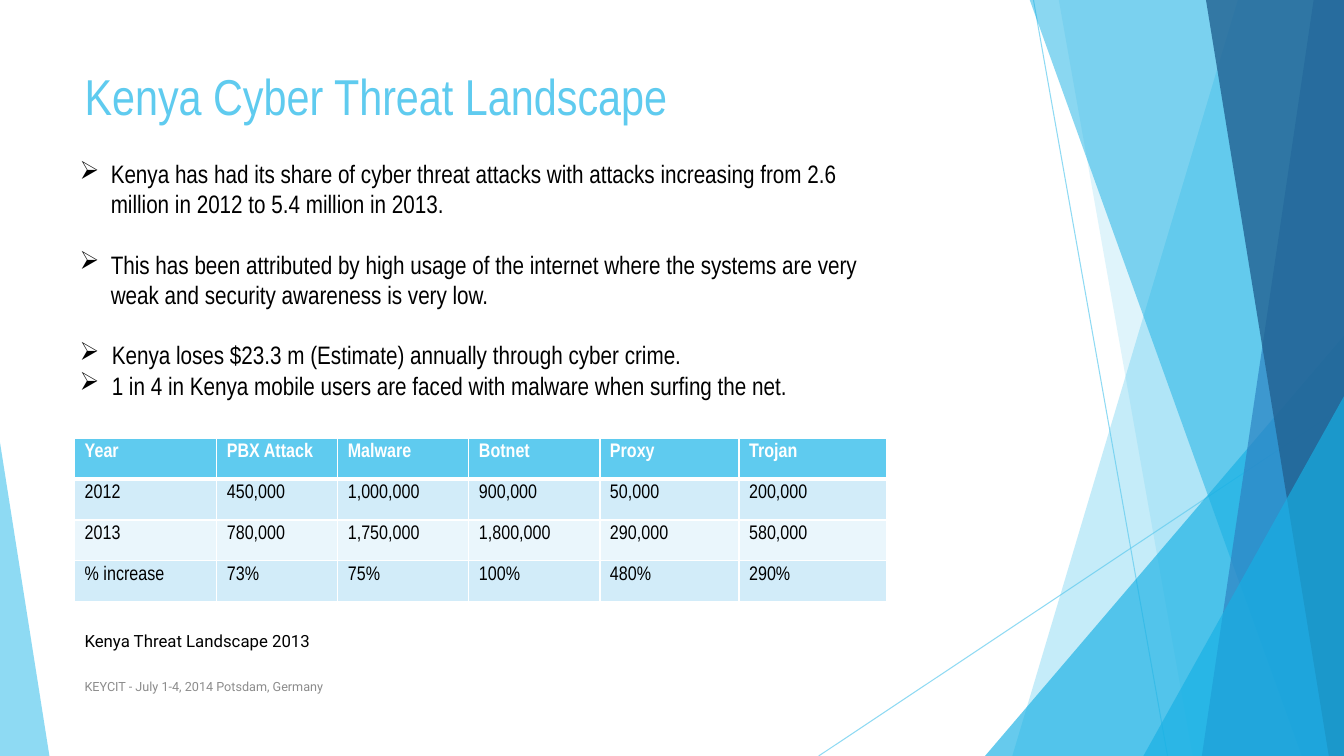
import pptx
import pptx.util
import pptx.dml.color
import pptx.enum.shapes
import pptx.enum.text
import pptx.oxml
import pptx.oxml.ns
import lxml.etree

PX = 9144
COLORS = {
    "sky": "5FCBEF", "cyan": "17B0E4", "blue": "2E83C3", "navy": "226292",
    "band": "D2ECF9", "pale": "EAF6FC", "white": "FFFFFF",
    "black": "000000", "gray": "8C8C8C",
}
NARROW = "Arial Narrow"
RAYS = [((1025, 0), (1158, 750)), ((1333, 403), (812, 750))]
PANELS = [
    (1228, 1004, "sky", 36), (1050, 1183, "sky", 20),
    (1021, 1291, "cyan", 50), (1303, 1192, "blue", 70),
    (1196, 1318, "navy", 80),
]
TRIANGLES = [
    (977, 333, 356, 417, 1, "cyan", 66),
    (1134, 393, 199, 357, 1, "cyan", 66),
    (0, 439, 49, 311, 0, "sky", 70),
]
POINTS = [
    ("Kenya has had its share of cyber threat attacks with attacks increasing "
     "from 2.6 million in 2012 to 5.4 million in 2013.", 31, 21.6),
    ("This has been attributed by high usage of the internet where the systems "
     "are very weak and security awareness is very low.", 31, 21.6),
    ("Kenya loses $23.3 m (Estimate) annually through cyber crime.", 32, 0),
    ("1 in 4 in Kenya mobile users are faced with malware when surfing the net.", 32, 0),
]
COLUMN_WIDTHS = [141, 120, 130, 130, 138, 146]
ATTACKS = [
    ["Year", "PBX Attack", "Malware", "Botnet", "Proxy", "Trojan"],
    ["2012", "450,000", "1,000,000", "900,000", "50,000", "200,000"],
    ["2013", "780,000", "1,750,000", "1,800,000", "290,000", "580,000"],
    ["% increase", "73%", "75%", "100%", "480%", "290%"],
]


def px(*lengths):
    return [length * PX for length in lengths]


def rgb(name):
    return pptx.dml.color.RGBColor.from_string(COLORS[name])


def add_element(parent, tag, **attributes):
    return lxml.etree.SubElement(parent, pptx.oxml.ns.qn(tag), attributes)


def paint(fill, color, opacity):
    fill.solid()
    fill.fore_color.rgb = rgb(color)
    target = fill._xPr.find(".//" + pptx.oxml.ns.qn("a:srgbClr"))
    add_element(target, "a:alpha", val=str(opacity * 1000))


def add_ray(slide, start, end):
    connector = slide.shapes.add_connector(
        pptx.enum.shapes.MSO_CONNECTOR.STRAIGHT, *px(*start, *end))
    connector.line.width = pptx.util.Pt(0.75)
    paint(connector.line.fill, "sky", 70)
    add_element(connector._element.spPr, "a:effectLst")


def finish_shape(shape, color, opacity):
    shape.shadow.inherit = False
    shape.line.fill.background()
    paint(shape.fill, color, opacity)


def add_panel(slide, top_x, bottom_x, color, opacity):
    builder = slide.shapes.build_freeform(top_x, -1, scale=PX)
    builder.add_line_segments([(1333, -1), (1333, 750), (bottom_x, 750)], close=True)
    finish_shape(builder.convert_to_shape(), color, opacity)


def add_triangle(slide, left, top, width, height, apex, color, opacity):
    shape = slide.shapes.add_shape(
        pptx.enum.shapes.MSO_SHAPE.ISOSCELES_TRIANGLE, *px(left, top, width, height))
    shape.adjustments[0] = apex
    finish_shape(shape, color, opacity)


def add_run(paragraph, text, size, font, color, bold=False):
    run = paragraph.add_run()
    run.text = text
    run.font.size = pptx.util.Pt(size)
    run.font.name = font
    run.font.bold = bold
    run.font.color.rgb = rgb(color)


def add_text_frame(slide, box):
    frame = slide.shapes.add_textbox(*px(*box)).text_frame
    frame.word_wrap = True
    return frame


def add_label(slide, box, text, size, font, color):
    frame = add_text_frame(slide, box)
    add_run(frame.paragraphs[0], text, size, font, color)
    return frame


def add_bullets(slide, box, points):
    frame = add_text_frame(slide, box)
    for index, (text, indent, space) in enumerate(points):
        paragraph = frame.add_paragraph() if index else frame.paragraphs[0]
        paragraph.space_after = pptx.util.Pt(space)
        properties = paragraph._p.get_or_add_pPr()
        properties.set("marL", str(indent * PX))
        properties.set("indent", str(-indent * PX))
        add_element(properties, "a:buChar", char="➢")
        add_run(paragraph, text, 18, NARROW, "black")


def add_borders(cell, bottom):
    properties = cell._tc.get_or_add_tcPr()
    for side, width in (("L", 1), ("R", 1), ("T", 1), ("B", bottom)):
        line = add_element(properties, "a:ln" + side, w=str(pptx.util.Pt(width)))
        add_element(add_element(line, "a:solidFill"), "a:srgbClr", val=COLORS["white"])


def add_attack_table(slide):
    table = slide.shapes.add_table(
        len(ATTACKS), len(COLUMN_WIDTHS), *px(74, 435, sum(COLUMN_WIDTHS), 162)).table
    for column, width in zip(table.columns, COLUMN_WIDTHS):
        column.width = width * PX
    for row_index, values in enumerate(ATTACKS):
        header = row_index == 0
        fill = "sky" if header else ("pale", "band")[row_index % 2]
        for column_index, value in enumerate(values):
            cell = table.cell(row_index, column_index)
            add_borders(cell, 3 if header else 1)
            cell.fill.solid()
            cell.fill.fore_color.rgb = rgb(fill)
            add_run(cell.text_frame.paragraphs[0], value, 14, NARROW,
                    "white" if header else "black", header)


def add_backdrop(slide):
    for ray in RAYS:
        add_ray(slide, *ray)
    for panel in PANELS[:2]:
        add_panel(slide, *panel)
    add_triangle(slide, *TRIANGLES[0])
    for panel in PANELS[2:]:
        add_panel(slide, *panel)
    for triangle in TRIANGLES[1:]:
        add_triangle(slide, *triangle)


def main():
    presentation = pptx.Presentation()
    presentation.slide_width, presentation.slide_height = px(1333, 750)
    slide = presentation.slides.add_slide(presentation.slide_layouts[6])
    add_backdrop(slide)
    footer = add_label(slide, (74, 661, 689, 40),
                       "KEYCIT - July 1-4, 2014 Potsdam, Germany", 9, "Roboto", "gray")
    footer.vertical_anchor = pptx.enum.text.MSO_ANCHOR.MIDDLE
    add_attack_table(slide)
    add_label(slide, (74, 60, 796, 71), "Kenya Cyber Threat Landscape", 36, NARROW, "sky")
    add_bullets(slide, (69, 152, 832, 374), POINTS)
    add_label(slide, (74, 621, 530, 30), "Kenya Threat Landscape 2013", 12, "Roboto", "black")
    presentation.save("out.pptx")


if __name__ == "__main__":
    main()
